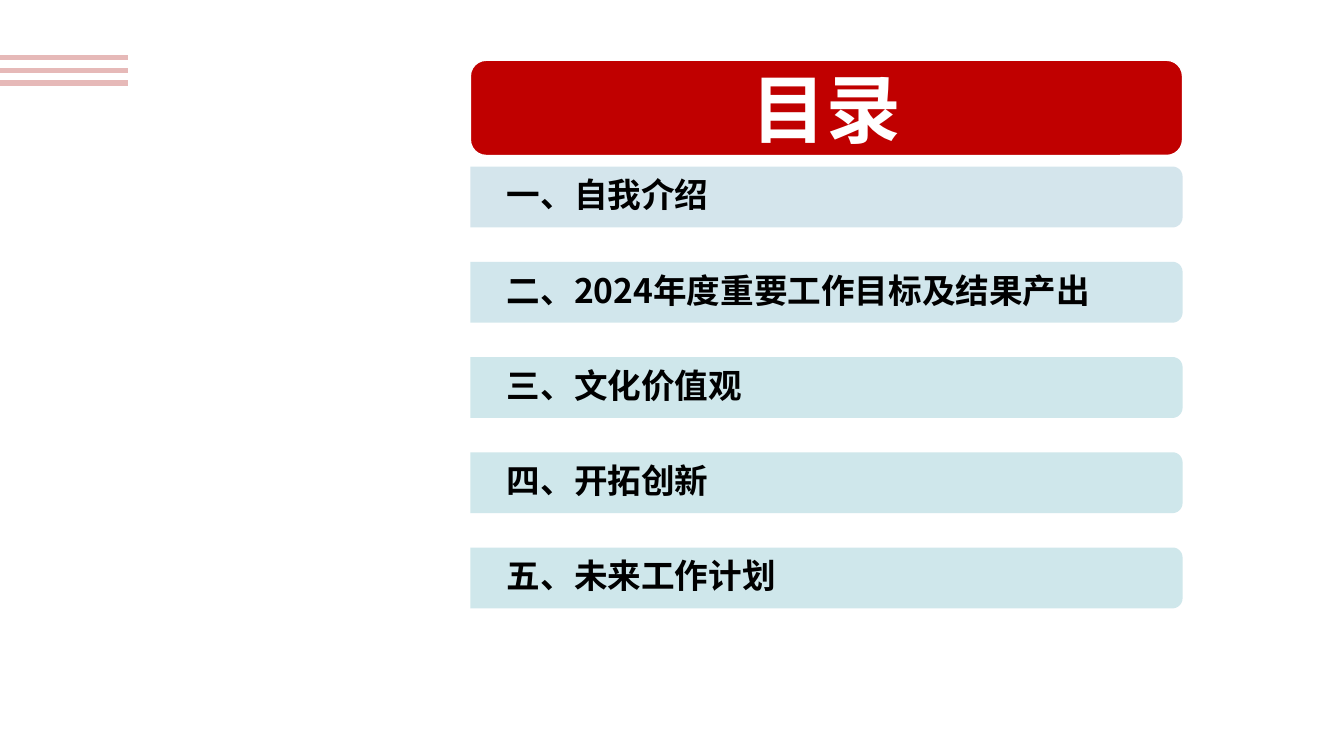
import math
import pptx
import pptx.util
import pptx.dml.color
import pptx.enum.shapes
import pptx.enum.text
import pptx.oxml.ns
import lxml.etree

Cm = pptx.util.Cm
Pt = pptx.util.Pt

COLORS = {
    "red": "C00000", "pink": "E6B9B8", "white": "FFFFFF", "black": "000000",
    "mist": "D0E3EA", "sky": "CDE4EA", "aqua": "CAE5E9",
}
TITLE = "目录"
ITEMS = [
    ("一、自我介绍", "mist", 0.48),
    ("二、2024年度重要工作目标及结果产出", "sky", 0.48),
    ("三、文化价值观", "aqua", 0.3),
    ("四、开拓创新", "aqua", 0.3),
    ("五、未来工作计划", "aqua", 0.3),
]
LEFT, WIDTH = 8.89, 13.46
HEAD = (LEFT, 1.14, WIDTH, 1.8)
TOP, HEIGHT, PITCH, RADIUS = 3.15, 1.15, 1.8, 0.19
LINES, LINE_TOP, LINE_GAP, LINE_END = 3, 1.09, 0.24, 2.41


def color(name):
    return pptx.dml.color.RGBColor.from_string(COLORS[name])


def add_sub(parent, tag, **attrs):
    return lxml.etree.SubElement(parent, pptx.oxml.ns.qn(tag), **attrs)


def set_font(para, face, size, ink):
    font = para.font
    font.size, font.bold = Pt(size), True
    font.color.rgb = color(ink)
    font.name = face
    props = para._p.pPr.find(pptx.oxml.ns.qn("a:defRPr"))
    add_sub(props, "a:ea", typeface="Noto Sans CJK SC")


def add_lines(slide):
    for i in range(LINES):
        y = Cm(LINE_TOP + i * LINE_GAP)
        line = slide.shapes.add_connector(
            pptx.enum.shapes.MSO_CONNECTOR.STRAIGHT, 0, y, Cm(LINE_END), y)
        line.line.color.rgb = color("pink")
        line.line.width = Pt(3)
        add_sub(line._element.spPr, "a:effectLst")


def add_head(slide):
    box = [Cm(v) for v in HEAD]
    panel = slide.shapes.add_shape(
        pptx.enum.shapes.MSO_SHAPE.ROUNDED_RECTANGLE, *box)
    panel.shadow.inherit = False
    panel.fill.solid()
    panel.fill.fore_color.rgb = color("red")
    panel.line.color.rgb = color("white")
    panel.line.width = Pt(0.75)

    title = slide.shapes.title
    title.left, title.top, title.width, title.height = box
    slide.shapes._spTree.append(title._element)
    frame = title.text_frame
    frame.text = TITLE
    frame.auto_size = pptx.enum.text.MSO_AUTO_SIZE.NONE
    frame.vertical_anchor = pptx.enum.text.MSO_ANCHOR.MIDDLE
    para = frame.paragraphs[0]
    para.alignment = pptx.enum.text.PP_ALIGN.CENTER
    set_font(para, "Calibri", 40, "white")


def add_bar(slide, top, text, tint, indent):
    right, base = LEFT + WIDTH, top + HEIGHT
    turns = [math.radians(a) for a in range(0, 91, 10)]
    upper = [(right - RADIUS + RADIUS * math.sin(t),
              top + RADIUS - RADIUS * math.cos(t)) for t in turns]
    lower = [(x, top + base - y) for x, y in reversed(upper)]
    points = [(Cm(x), Cm(y)) for x, y in upper + lower + [(LEFT, base)]]
    path = slide.shapes.build_freeform(Cm(LEFT), Cm(top))
    path.add_line_segments(points, close=True)
    bar = path.convert_to_shape()
    bar.shadow.inherit = False
    bar.fill.solid()
    bar.fill.fore_color.rgb = color(tint)
    bar.line.fill.background()
    fill = bar._element.spPr.find(pptx.oxml.ns.qn("a:solidFill"))
    add_sub(fill[0], "a:alpha", val="90000")

    frame = bar.text_frame
    frame.text = text
    frame.word_wrap = True
    frame.vertical_anchor = pptx.enum.text.MSO_ANCHOR.MIDDLE
    frame.margin_left, frame.margin_right = Cm(0.69), Cm(0.74)
    frame.margin_top = frame.margin_bottom = Cm(0.38)
    para = frame.paragraphs[0]
    para.alignment = pptx.enum.text.PP_ALIGN.LEFT
    para.line_spacing = 0.9
    para._p.pPr.set("marL", str(Cm(indent)))
    para._p.pPr.set("indent", str(-Cm(indent)))
    set_font(para, "Noto Sans CJK SC", 18, "black")


def main():
    deck = pptx.Presentation()
    deck.slide_width, deck.slide_height = Cm(25.4), Cm(14.29)
    slide = deck.slides.add_slide(deck.slide_layouts[5])
    add_lines(slide)
    add_head(slide)
    for i, item in enumerate(ITEMS):
        add_bar(slide, TOP + i * PITCH, *item)
    deck.save("out.pptx")


if __name__ == "__main__":
    main()
